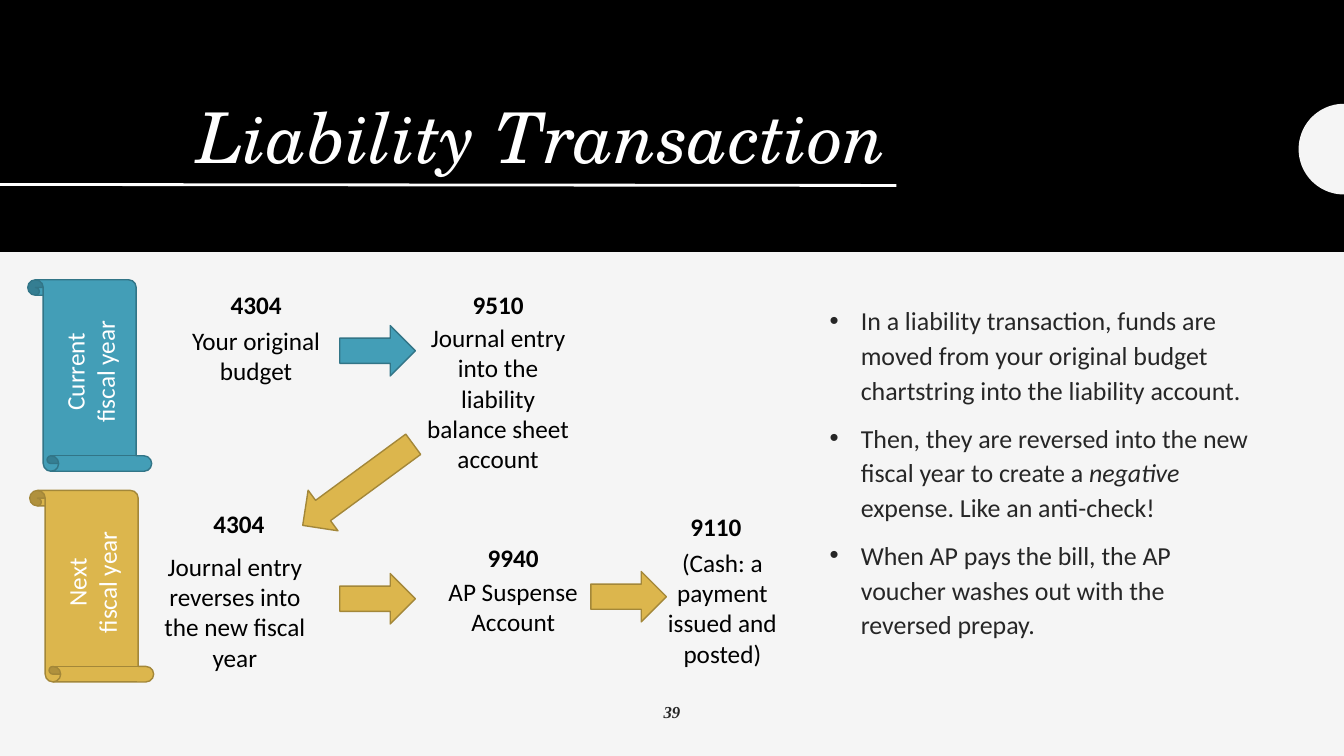
"""Build the liability transaction slide with its two-year account flow."""
import math
from dataclasses import dataclass
from typing import NamedTuple

from lxml import etree
from pptx import Presentation
from pptx import util as u
from pptx.dml.color import RGBColor
from pptx.enum import shapes, text
from pptx.oxml import ns

EMU_PER_PX = 9144


class Tone(NamedTuple):
    fill: str
    line: str


class Box(NamedTuple):
    left: int
    top: int
    width: int
    height: int


@dataclass(frozen=True)
class Theme:
    paper: str = "F5F5F5"
    band: str = "000000"
    white: str = "FFFFFF"
    black: str = "000000"
    dark: str = "262626"
    current: Tone = Tone("439EB7", "327587")
    following: Tone = Tone("DCB64D", "A38739")
    title_font: str = "TeX Gyre Schola"
    body_font: str = "Calibri"
    number_font: str = "Times New Roman"
    title_size: float = 50
    bullet_size: float = 18.5
    label_size: float = 18
    number_size: float = 12


@dataclass(frozen=True)
class Account:
    code: str
    code_box: Box
    note: str
    note_box: Box


@dataclass(frozen=True)
class Block:
    kind: shapes.MSO_SHAPE
    box: Box
    tone: Tone
    rotation: float = 0
    lines: tuple[str, ...] = ()


THEME = Theme()
ARROW = shapes.MSO_SHAPE.RIGHT_ARROW
SCROLL = shapes.MSO_SHAPE.HORIZONTAL_SCROLL

ACCOUNTS = (
    Account("4304", Box(172, 282, 164, 40),
            "Your original budget", Box(172, 318, 164, 71)),
    Account("9510", Box(412, 282, 164, 40),
            "Journal entry into the liability balance sheet account", Box(412, 315, 164, 162)),
    Account("4304", Box(155, 499, 164, 40),
            "Journal entry reverses into the new fiscal year", Box(151, 542, 164, 131)),
    Account("9940", Box(427, 533, 164, 40),
            "AP Suspense Account", Box(427, 567, 164, 71)),
    Account("9110", Box(635, 502, 150, 40),
            "(Cash: a payment issued and posted)", Box(648, 538, 137, 131)),
)

BLOCKS = (
    Block(SCROLL, Box(-6, 311, 190, 123), THEME.current, 270, ("Current", "fiscal year")),
    Block(SCROLL, Box(-4, 520, 190, 123), THEME.following, 270, ("Next", "fiscal year")),
    Block(ARROW, Box(337, 323, 75, 50), THEME.current),
    Block(ARROW, Box(287, 456, 136, 50), THEME.following, 143.7),
    Block(ARROW, Box(337, 569, 75, 50), THEME.following),
    Block(ARROW, Box(586, 567, 75, 50), THEME.following),
)

BULLETS = (
    ("In a liability transaction, funds are moved from your original budget "
     "chartstring into the liability account.",),
    ("Then, they are reversed into the new fiscal year to create a ", "negative",
     " expense. Like an anti-check!"),
    ("When AP pays the bill, the AP voucher washes out with the reversed prepay.",),
)


def px(length: float) -> u.Emu:
    return u.Emu(round(length * EMU_PER_PX))


def place(box: Box) -> tuple[u.Emu, ...]:
    return tuple(px(length) for length in box)


def paint(shape, fill: str, line: str | None = None) -> None:
    shape.shadow.inherit = False
    shape.fill.solid()
    shape.fill.fore_color.rgb = RGBColor.from_string(fill)
    if line:
        shape.line.color.rgb = RGBColor.from_string(line)
        shape.line.width = u.Pt(1)
    else:
        shape.line.fill.background()


def add_run(paragraph, content: str, *, size: float = THEME.label_size,
            font: str = THEME.body_font, color: str = THEME.black,
            bold: bool = False, italic: bool = False) -> None:
    run = paragraph.add_run()
    run.text = content
    run.font.size = u.Pt(size)
    run.font.name = font
    run.font.color.rgb = RGBColor.from_string(color)
    run.font.bold = bold
    run.font.italic = italic


def add_text(slide, box: Box, content: str, *, align=text.PP_ALIGN.CENTER,
             anchor=text.MSO_ANCHOR.TOP, fit=text.MSO_AUTO_SIZE.SHAPE_TO_FIT_TEXT,
             spacing: float = 1.0, **style) -> None:
    frame = slide.shapes.add_textbox(*place(box)).text_frame
    frame.word_wrap = True
    frame.auto_size = fit
    frame.vertical_anchor = anchor
    paragraph = frame.paragraphs[0]
    paragraph.alignment = align
    paragraph.line_spacing = spacing
    add_run(paragraph, content, **style)


def add_block(slide, block: Block) -> None:
    shape = slide.shapes.add_shape(block.kind, *place(block.box))
    shape.rotation = block.rotation
    paint(shape, *block.tone)
    frame = shape.text_frame
    frame.vertical_anchor = text.MSO_ANCHOR.MIDDLE
    for index, line in enumerate(block.lines):
        paragraph = frame.add_paragraph() if index else frame.paragraphs[0]
        paragraph.alignment = text.PP_ALIGN.CENTER
        add_run(paragraph, line, color=THEME.white)


def add_bullets(slide, box: Box) -> None:
    frame = slide.shapes.add_textbox(*place(box)).text_frame
    frame.word_wrap = True
    for index, parts in enumerate(BULLETS):
        paragraph = frame.add_paragraph() if index else frame.paragraphs[0]
        paragraph.line_spacing = 1.12
        paragraph.space_before = u.Pt(9)
        properties = paragraph._p.get_or_add_pPr()
        properties.set("marL", str(px(31)))
        properties.set("indent", str(px(-31)))
        etree.SubElement(properties, ns.qn("a:buFont"), typeface="Arial")
        etree.SubElement(properties, ns.qn("a:buChar"), char="•")
        for part in parts:
            add_run(paragraph, part, size=THEME.bullet_size, color=THEME.dark,
                    italic=part == "negative")


def add_header(slide) -> None:
    band = slide.shapes.add_shape(shapes.MSO_SHAPE.RECTANGLE, *place(Box(0, 0, 1333, 250)))
    paint(band, THEME.band)
    add_text(slide, Box(105, 47, 784, 135), "Liability Transaction",
             align=text.PP_ALIGN.RIGHT, anchor=text.MSO_ANCHOR.BOTTOM,
             fit=text.MSO_AUTO_SIZE.NONE, spacing=0.9, size=THEME.title_size,
             font=THEME.title_font, color=THEME.white, italic=True)
    rule = slide.shapes.add_connector(
        shapes.MSO_CONNECTOR.STRAIGHT, px(0), px(183), px(889), px(184))
    rule.line.color.rgb = RGBColor.from_string(THEME.white)
    rule.line.width = u.Pt(2)
    etree.SubElement(rule._element.spPr, ns.qn("a:effectLst"))
    center_x, center_y, radius = 1333, 148, 45
    arc = [(px(center_x - radius * math.sin(math.radians(angle))),
            px(center_y - radius * math.cos(math.radians(angle))))
           for angle in range(0, 181, 4)]
    builder = slide.shapes.build_freeform(*arc[0])
    builder.add_line_segments(arc[1:], close=True)
    paint(builder.convert_to_shape(), THEME.paper)


def main() -> None:
    presentation = Presentation()
    presentation.slide_width, presentation.slide_height = u.Inches(13.33), u.Inches(7.5)
    slide = presentation.slides.add_slide(presentation.slide_layouts[6])
    slide.background.fill.solid()
    slide.background.fill.fore_color.rgb = RGBColor.from_string(THEME.paper)
    add_header(slide)
    add_bullets(slide, Box(813, 294, 447, 387))
    for block in BLOCKS:
        add_block(slide, block)
    for account in ACCOUNTS:
        add_text(slide, account.code_box, account.code, bold=True)
        add_text(slide, account.note_box, account.note)
    add_text(slide, Box(0, 691, 1333, 40), "39", fit=text.MSO_AUTO_SIZE.NONE,
             size=THEME.number_size, font=THEME.number_font, color=THEME.dark,
             bold=True, italic=True)
    presentation.save("out.pptx")


if __name__ == "__main__":
    main()
